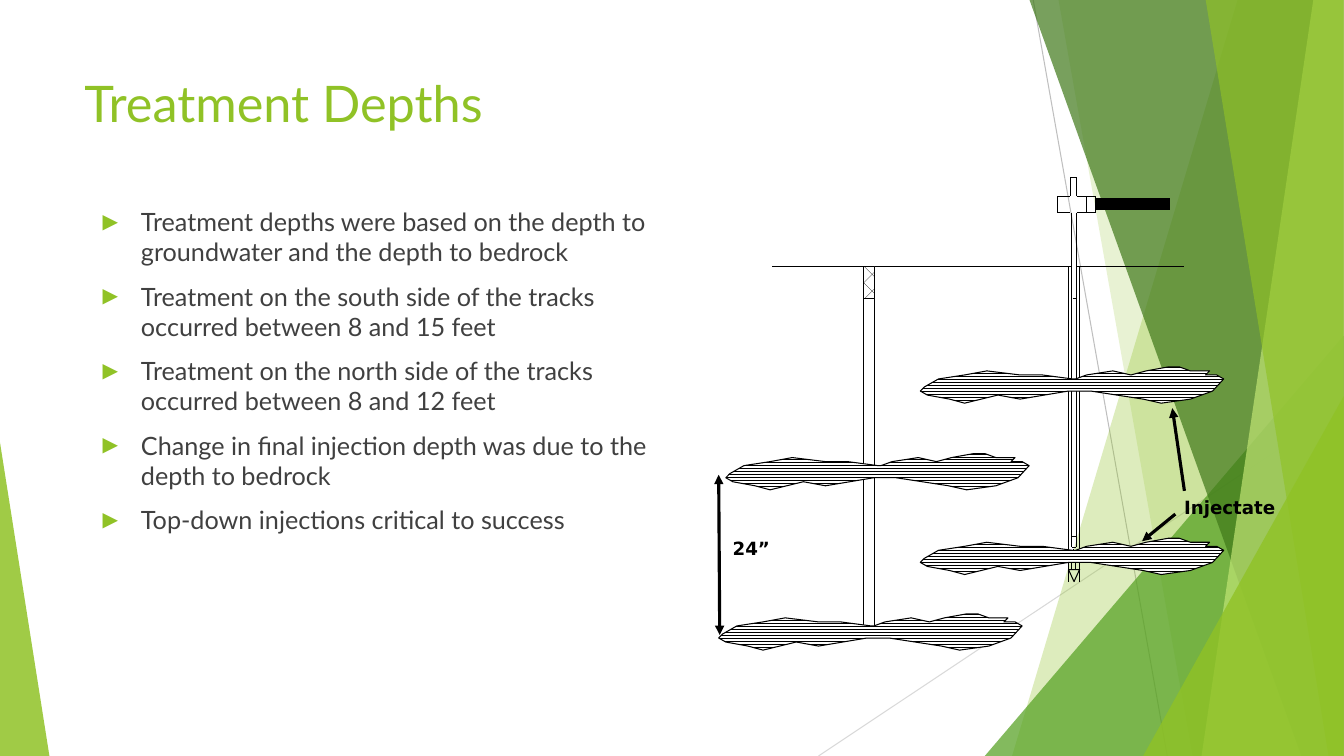
import pptx
import pptx.util
import pptx.dml.color
import pptx.enum.dml
import pptx.enum.shapes
import pptx.oxml
import pptx.oxml.ns

CELL = pptx.util.Inches(0.01)  # the slide is a grid of 1333 columns and 750 rows
COLUMNS, ROWS = 1333, 750
LIME, INK, BLACK, WHITE = "90C226", "404040", "000000", "FFFFFF"
PRESET = pptx.enum.shapes.MSO_SHAPE
PATTERN = pptx.enum.dml.MSO_PATTERN
qn = pptx.oxml.ns.qn


def paint(fill, color, opacity=100, pattern=None):
    """Fill with a hex colour, or with a pattern of that colour on white."""
    if pattern:
        fill.patterned()
        fill.pattern = pattern
        fill.fore_color.rgb = pptx.dml.color.RGBColor.from_string(color)
        fill.back_color.rgb = pptx.dml.color.RGBColor.from_string(WHITE)
        return
    fill.solid()
    fill.fore_color.rgb = pptx.dml.color.RGBColor.from_string(color)
    if opacity < 100:
        rgb = fill._xPr.find(qn("a:solidFill"))[0]
        rgb.makeelement(qn("a:alpha"))
        pptx.oxml.ns  # namespace map used by qn
        alpha = rgb.makeelement(qn("a:alpha"), {"val": str(opacity * 1000)})
        rgb.append(alpha)


def draw_line(ends, color=BLACK, width=0.75, heads=()):
    connector = slide.shapes.add_connector(
        pptx.enum.shapes.MSO_CONNECTOR.STRAIGHT, *(CELL * n for n in ends))
    paint(connector.line.fill, color)
    connector.line.width = pptx.util.Pt(width)
    outline = connector.line._get_or_add_ln()
    for head in heads:
        outline.append(outline.makeelement(qn(head), {"type": "triangle"}))
    properties = connector._element.spPr
    properties.append(properties.makeelement(qn("a:effectLst")))
    return connector


deck = pptx.Presentation()
deck.slide_width, deck.slide_height = pptx.util.Inches(13.333), pptx.util.Inches(7.5)
slide = deck.slides.add_slide(deck.slide_layouts[6])

# Green backdrop: facets are (top x, bottom x), triangles (left, top, width, height, apex)
draw_line((1025, 0, 1158, ROWS), "BFBFBF")
draw_line((COLUMNS, 403, 812, ROWS), "D9D9D9")
backdrop = [
    ((1228, 1004), LIME, 30),
    ((1050, 1183), LIME, 20),
    ((977, 333, 356, 417, 1), "54A021", 72),
    ((1021, 1291), "3F7819", 70),
    ((1303, 1192), "C0E474", 70),
    ((1196, 1318), LIME, 65),
    ((1134, 393, 199, 357, 1), LIME, 80),
    ((0, 439, 49, 311, 0), LIME, 85),
]
for geometry, color, opacity in backdrop:
    if len(geometry) == 2:
        top_x, bottom_x = geometry
        builder = slide.shapes.build_freeform(top_x, -1, scale=CELL)
        builder.add_line_segments([(COLUMNS, -1), (COLUMNS, ROWS), (bottom_x, ROWS)])
        facet = builder.convert_to_shape()
    else:
        facet = slide.shapes.add_shape(
            PRESET.ISOSCELES_TRIANGLE, *(CELL * n for n in geometry[:4]))
        facet.adjustments[0] = geometry[4]
    facet.shadow.inherit = False
    facet.line.fill.background()
    paint(facet.fill, color, opacity)

# Ground surface, borehole casings, drill rod and clamp
thin_lines = [
    (868, 264, 975, 264), (857, 264, 766, 264),
    (1068, 264, 1175, 264), (1063, 264, 972, 264),
    (1062, 176, 1068, 176), (1062, 194, 1062, 176), (1068, 176, 1068, 194),
    (1049, 195, 1062, 195), (1068, 195, 1087, 195),
    (1049, 211, 1062, 211), (1087, 211, 1068, 211),
    (1064, 296, 1068, 296),
]
thin_lines += [(x, 264, x, 623) for x in (857, 868)]
thin_lines += [(x, 264, x, 577) for x in (1060, 1071)]
thin_lines += [(x, 211, x, 543) for x in (1063, 1068)]
thin_lines += [(x, 195, x, 211) for x in (1049, 1078, 1087)]
thin_lines += [(1063, y, 1067, y) for y in (532, 543, 556)]
thin_lines += [(x, 565, x, 556) for x in (1063, 1067)]
for ends in thin_lines:
    draw_line(ends)
for hose_y in (200, 205):
    draw_line((1087, hose_y, 1161, hose_y), width=4.5)
drill_axis = draw_line((1065, 543, 1065, 556))
drill_axis.line.dash_style = pptx.enum.dml.MSO_LINE.ROUND_DOT

# Injectate lenses share one outline
lens_outline = [
    (151, 12), (121, 8), (99, 8), (66, 4), (44, 8), (18, 12), (4, 20), (0, 24),
    (7, 28), (29, 32), (44, 36), (77, 28), (99, 32), (147, 24), (169, 24),
    (221, 32), (239, 36), (268, 32), (290, 24), (301, 12), (294, 8), (283, 8),
    (287, 4), (268, 4), (257, 0), (246, 0), (224, 4), (209, 8), (191, 4),
    (165, 8), (154, 12),
]
diagram_shapes = []
for left, top in [(720, 450), (713, 609), (913, 364), (913, 534)]:
    points = [(left + x, top + y) for x, y in lens_outline]
    builder = slide.shapes.build_freeform(*points[0], scale=CELL)
    builder.add_line_segments(points[1:])
    diagram_shapes.append((builder.convert_to_shape(), PATTERN.ZIG_ZAG))
for preset, box, pattern in [
    (PRESET.FLOWCHART_MERGE, (1060, 565, 11, 12), None),
    (PRESET.RECTANGLE, (857, 264, 11, 32), PATTERN.DIAGONAL_BRICK),
]:
    fitting = slide.shapes.add_shape(preset, *(CELL * n for n in box))
    diagram_shapes.append((fitting, pattern))
for part, pattern in diagram_shapes:
    part.shadow.inherit = False
    paint(part.line.fill, BLACK)
    part.line.width = pptx.util.Pt(0.75)
    if pattern:
        paint(part.fill, BLACK, pattern=pattern)
    else:
        part.fill.background()

for ends, heads in [
    ((1166, 510, 1133, 537), ["a:tailEnd"]),
    ((1175, 487, 1163, 405), ["a:tailEnd"]),
    ((714, 630, 713, 471), ["a:headEnd", "a:tailEnd"]),
]:
    draw_line(ends, width=2.25, heads=heads)

findings = [
    "Treatment depths were based on the depth to groundwater and the depth to bedrock",
    "Treatment on the south side of the tracks occurred between 8 and 15 feet",
    "Treatment on the north side of the tracks occurred between 8 and 12 feet",
    "Change in final injection depth was due to the depth to bedrock",
    "Top-down injections critical to success",
]
texts = [
    ((74, 67, 940, 144), ["Treatment Depths"], 36, "Lato", LIME),
    ((92, 200, 573, 476), findings, 18, "Lato", INK),
    ((1165, 487, 120, 32), ["Injectate"], 13, "DejaVu Sans", BLACK),
    ((717, 528, 120, 32), ["24”"], 13, "DejaVu Sans", BLACK),
]
for box, lines, size, typeface, color in texts:
    frame = slide.shapes.add_textbox(*(CELL * n for n in box)).text_frame
    frame.word_wrap = True
    frame.text = "\n".join(lines)
    for paragraph in frame.paragraphs:
        font = paragraph.runs[0].font
        font.size, font.name = pptx.util.Pt(size), typeface
        font.bold = color == BLACK
        paint(font.fill, color)
        if lines is findings:
            paragraph.space_before = pptx.util.Pt(10)
            layout = paragraph._p.get_or_add_pPr()
            layout.set("marL", str(CELL * 38))
            layout.set("indent", str(CELL * -38))
            bullet_color = layout.makeelement(qn("a:buClr"))
            bullet_color.append(layout.makeelement(qn("a:srgbClr"), {"val": LIME}))
            layout.append(bullet_color)
            for tag, attributes in [
                ("a:buSzPct", {"val": "80000"}),
                ("a:buFont", {"typeface": "DejaVu Sans"}),
                ("a:buChar", {"char": "▶"}),
            ]:
                layout.append(layout.makeelement(qn(tag), attributes))

deck.save("out.pptx")
